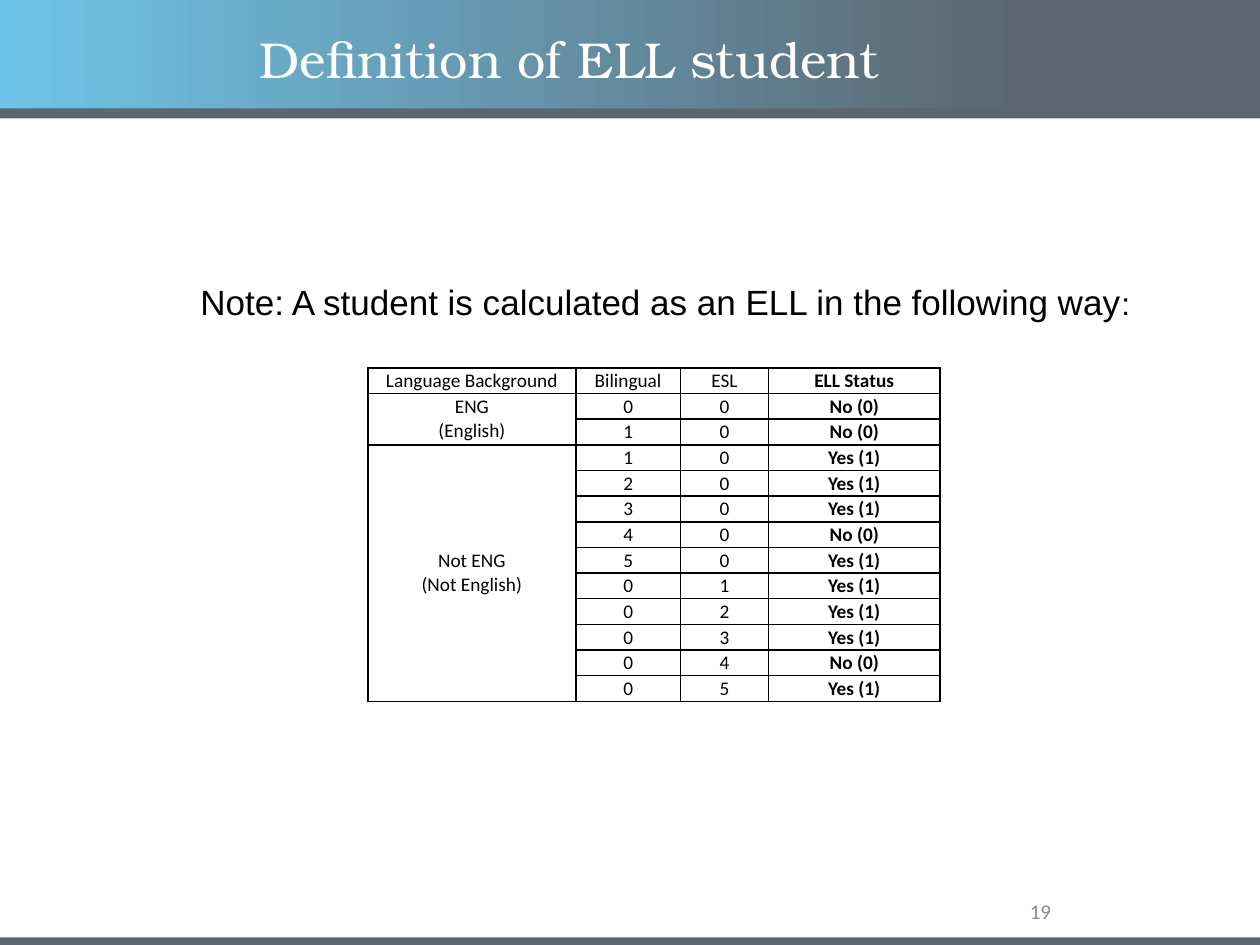
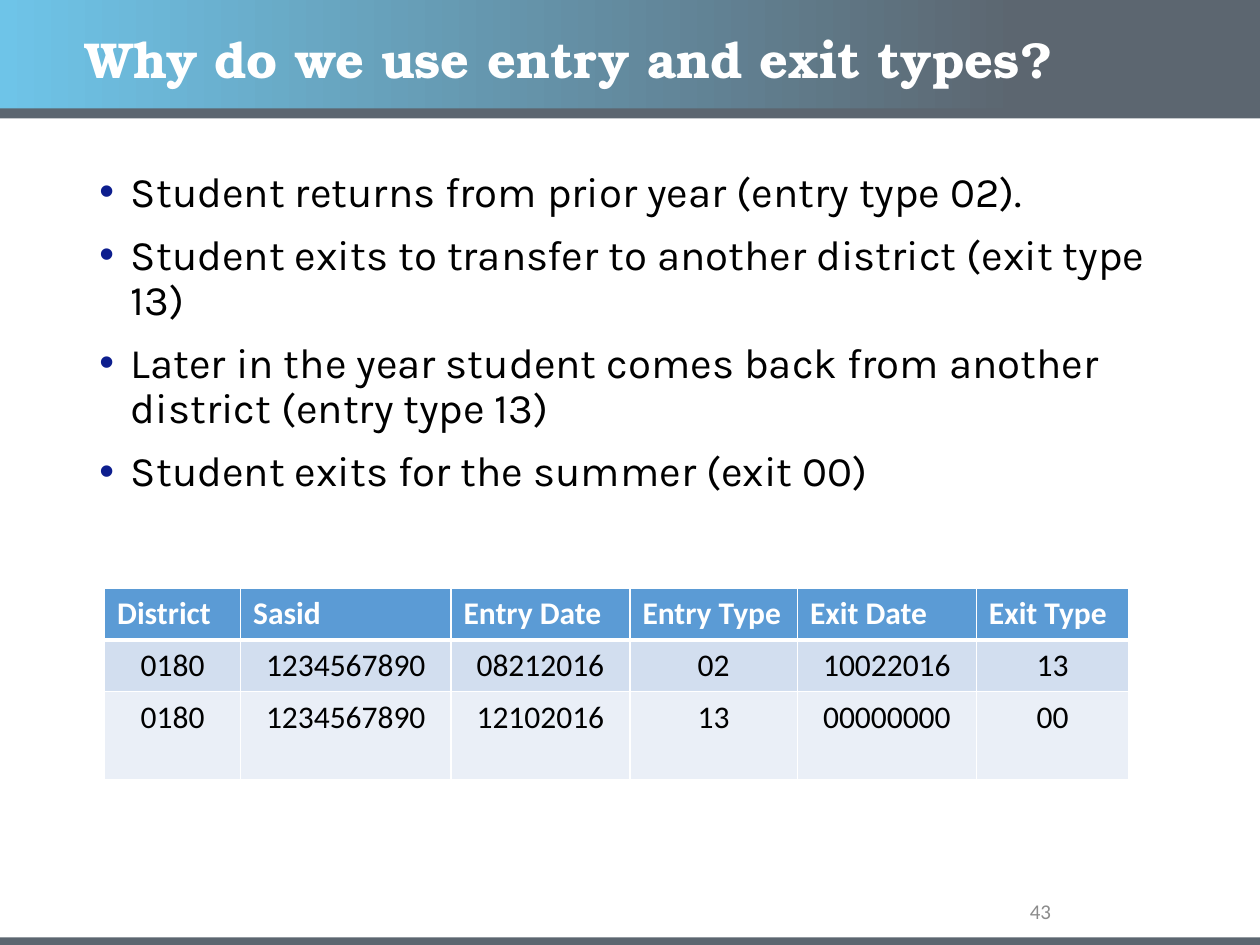
from lxml.etree import SubElement
from pptx import Presentation
from pptx.dml.color import RGBColor as RGB
from pptx.enum.shapes import MSO_SHAPE as Shape
from pptx.enum.text import MSO_ANCHOR as Anchor, MSO_AUTO_SIZE as Fit, PP_ALIGN as Align
from pptx.oxml import parse_xml
from pptx.oxml.ns import nsdecls, qn
from pptx.util import Inches, Pt

COLORS = {
    "sky": "6EC4E8", "slate": "5C6670", "white": "FFFFFF", "black": "000000",
    "gray": "8C8C8C", "navy": "0D1E8E", "head": "5B9BD5", "odd": "D2DEEF", "even": "EAEFF7",
}


def rgb(name):
    return RGB.from_string(COLORS[name])


class Deck:
    """Holds the shared style and the current slide."""

    serif, sans, plain, body = "TeX Gyre Bonum", "Calibri", "Arial", "Karla"

    def __init__(self):
        self.prs = Presentation()
        self.prs.slide_width, self.prs.slide_height = Inches(10), Inches(7.5)
        self.slide = None

    def start(self, title, number, bold=False):
        self.slide = self.prs.slides.add_slide(self.prs.slide_layouts[5])
        # Bands
        top = self.band(0, 0.87)
        top.fill.gradient()
        top.fill.gradient_angle = 0
        for stop, (place, color) in zip(top.fill.gradient_stops, [(0, "sky"), (0.81, "slate")]):
            stop.position = place
            stop.color.rgb = rgb(color)
        self.band(0.86, 0.08)
        self.band(7.44, 0.08)
        # Title, above the bands
        head = self.slide.shapes.title
        self.slide.shapes._spTree.append(head._element)
        head.left, head.top, head.width, head.height = map(Inches, (0.21, 0.21, 8.62, 0.57))
        frame = head.text_frame
        frame.text = title
        frame.auto_size, frame.vertical_anchor = Fit.NONE, Anchor.MIDDLE
        para = frame.paragraphs[0]
        para.line_spacing = 0.9
        self.style(para, self.serif, 28.8, "white", bold, Align.CENTER)
        # Page number
        frame = self.box(7.06, 7.12, 1.38, 0.23, number)
        frame.vertical_anchor = Anchor.MIDDLE
        self.style(frame.paragraphs[0], self.sans, 12, "gray", align=Align.RIGHT)

    def style(self, para, font, size, color, bold=False, align=Align.LEFT):
        para.alignment = align
        for run in para.runs:
            run.font.name, run.font.size, run.font.bold = font, Pt(size), bold
            run.font.color.rgb = rgb(color)

    def band(self, top, height):
        bar = self.slide.shapes.add_shape(
            Shape.RECTANGLE, 0, Inches(top), Inches(10), Inches(height))
        bar.shadow.inherit = False
        bar.fill.solid()
        bar.fill.fore_color.rgb = rgb("slate")
        bar.line.fill.background()
        return bar

    def box(self, left, top, width, height, text):
        frame = self.slide.shapes.add_textbox(
            *map(Inches, (left, top, width, height))).text_frame
        frame.word_wrap = True
        frame.text = text
        return frame

    def indent(self, para, left, first):
        props = para._p.get_or_add_pPr()
        props.set("marL", str(Inches(left)))
        props.set("indent", str(Inches(first)))
        return props

    def note(self, text, end):
        frame = self.box(0.03, 1.83, 10, 1.08, text)
        frame.vertical_anchor, frame.margin_top = Anchor.MIDDLE, Inches(0.1)
        para = frame.paragraphs[0]
        para.add_run().text = end
        self.indent(para, 0.88, -0.38)
        self.style(para, self.plain, 20, "black", align=Align.CENTER)
        para.runs[-1].font.size = Pt(18)

    def bullets(self, items):
        frame = self.box(0.69, 1.31, 8.62, 5.51, "\n".join(items))
        for i, para in enumerate(frame.paragraphs):
            para.line_spacing = 0.9
            para.space_before = Pt(10 if i else 0)
            props = self.indent(para, 0.25, -0.25)
            tint = SubElement(props, qn("a:buClr"))
            SubElement(tint, qn("a:srgbClr")).set("val", COLORS["navy"])
            SubElement(props, qn("a:buFont")).set("typeface", self.plain)
            SubElement(props, qn("a:buChar")).set("char", "•")
            self.style(para, self.body, 24, "black")

    def table(self, left, top, widths, heights, rows):
        grid = self.slide.shapes.add_table(
            len(rows), len(widths), Inches(left), Inches(top),
            Inches(sum(widths)), Inches(sum(heights))).table
        grid.first_row = grid.horz_banding = False
        for col, width in zip(grid.columns, widths):
            col.width = Inches(width)
        for row, height in zip(grid.rows, heights):
            row.height = Inches(height)
        for r, row in enumerate(rows):
            for c, text in enumerate(row):
                grid.cell(r, c).text = text
        return grid

    def paint(self, cell, fill=None):
        if fill:
            cell.fill.solid()
            cell.fill.fore_color.rgb = rgb(fill)
        else:
            cell.fill.background()

    def edges(self, cell, color, top=1, bottom=1):
        props = cell._tc.get_or_add_tcPr()
        for i, (side, width) in enumerate(zip("LRTB", (1, 1, top, bottom))):
            props.insert(i, parse_xml(
                f'<a:ln{side} {nsdecls("a")} w="{Pt(width)}"><a:solidFill>'
                f'<a:srgbClr val="{COLORS[color]}"/></a:solidFill></a:ln{side}>'))


def status(deck):
    deck.start("Definition of ELL student", "19")
    deck.note("Note: A student is calculated as an ELL in the following way", ":")
    # Language, bilingual and ESL codes with the resulting status
    no, yes = "No (0)", "Yes (1)"
    rows = [
        ("Language Background", "Bilingual", "ESL", "ELL Status"),
        ("ENG\n(English)", "0", "0", no),
        ("", "1", "0", no),
        ("Not ENG\n(Not English)", "1", "0", yes),
    ]
    rows += [("", str(n), "0", no if n == 4 else yes) for n in range(2, 6)]
    rows += [("", "0", str(n), no if n == 4 else yes) for n in range(1, 6)]
    count = len(rows)
    grid = deck.table(2.92, 2.92, [1.65, 0.83, 0.7, 1.36], [2.65 / count] * count, rows)
    for r in range(count):
        for c in range(4):
            cell = grid.cell(r, c)
            cell.vertical_anchor = Anchor.MIDDLE
            cell.margin_left = cell.margin_right = Inches(0.01)
            cell.margin_top = cell.margin_bottom = Inches(0.01)
            deck.paint(cell)
            deck.edges(cell, "black")
            for para in cell.text_frame.paragraphs:
                deck.style(para, deck.sans, 11, "black", c == 3, Align.CENTER)
                if not para.runs:
                    para.font.size = Pt(11)
    for first, last in [(1, 2), (3, count - 1)]:
        grid.cell(first, 0).merge(grid.cell(last, 0))


def types(deck):
    deck.start("Why do we use entry and exit types?", "43", bold=True)
    deck.bullets([
        "Student returns from prior year (entry type 02).",
        "Student exits to transfer to another district (exit type 13)",
        "Later in the year student comes back from another district (entry type 13)",
        "Student exits for the summer (exit 00)",
    ])
    # Enrollment records
    rows = [
        ("District", "Sasid", "Entry Date", "Entry Type", "Exit Date", "Exit Type"),
        ("0180", "1234567890", "08212016", "02", "10022016", "13"),
        ("0180", "1234567890", "12102016", "13", "00000000", "00"),
    ]
    widths = [1.08, 1.67, 1.42, 1.33, 1.42, 1.21]
    grid = deck.table(0.83, 4.67, widths, [0.41, 0.41, 0.7], rows)
    for r, fill in enumerate(["head", "odd", "even"]):
        head = r == 0
        for cell in grid.rows[r].cells:
            deck.paint(cell, fill)
            deck.edges(cell, "white", 3 if r == 1 else 1, 3 if head else 1)
            deck.style(cell.text_frame.paragraphs[0], deck.sans, 18,
                       "white" if head else "black", head,
                       Align.LEFT if head else Align.CENTER)


def main():
    deck = Deck()
    status(deck)
    types(deck)
    deck.prs.save("out.pptx")


if __name__ == "__main__":
    main()
